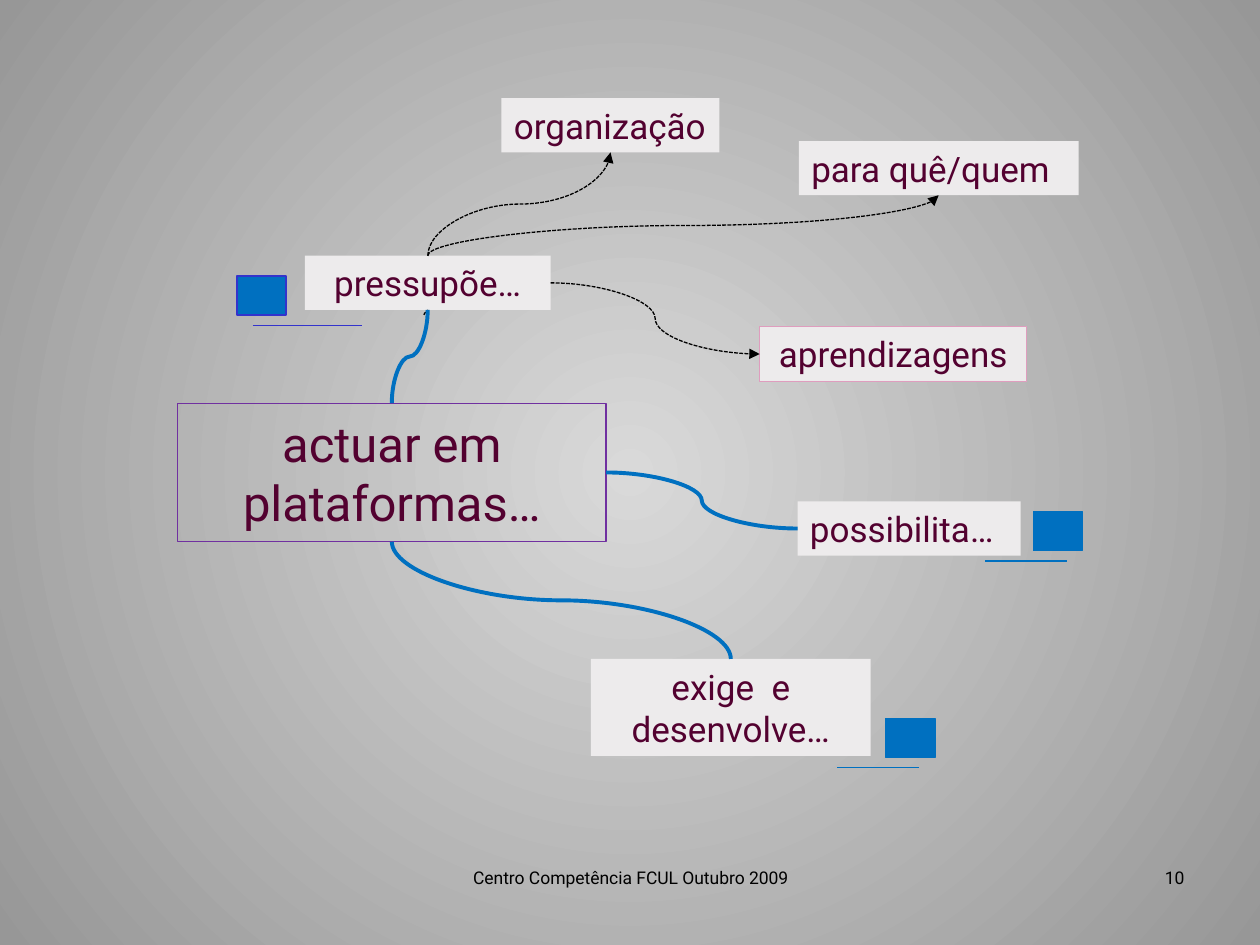
import pptx
import pptx.util
import pptx.dml.color
import pptx.enum.dml
import pptx.enum.shapes
import pptx.enum.text
import pptx.oxml
import pptx.oxml.ns
from lxml import etree

RGBColor = pptx.dml.color.RGBColor
SHAPE = pptx.enum.shapes.MSO_SHAPE
ALIGN = pptx.enum.text.PP_ALIGN
ANCHOR = pptx.enum.text.MSO_ANCHOR
FIT = pptx.enum.text.MSO_AUTO_SIZE
qn = pptx.oxml.ns.qn

PLUM = RGBColor(0x53, 0x01, 0x30)
PALE = RGBColor(0xED, 0xEB, 0xEC)
PINK = RGBColor(0xDF, 0x9D, 0xBE)
PURPLE = RGBColor(0x70, 0x30, 0xA0)
BLUE = RGBColor(0x00, 0x70, 0xC0)
INDIGO = RGBColor(0x33, 0x33, 0xCC)
BLACK = RGBColor(0x00, 0x00, 0x00)
LIGHT_GREY = RGBColor(0xD9, 0xD9, 0xD9)
DARK_GREY = RGBColor(0x97, 0x97, 0x97)


def write(tf, text, size=20, color=PLUM, align=ALIGN.CENTER, anchor=ANCHOR.TOP,
          fit=FIT.NONE, font="Roboto"):
    tf.word_wrap = True
    tf.auto_size = fit
    tf.vertical_anchor = anchor
    p = tf.paragraphs[0]
    p.alignment = align
    r = p.add_run()
    r.text = text
    r.font.name = font
    r.font.size = pptx.util.Pt(size)
    r.font.bold = False
    r.font.color.rgb = color


def side(sp, name):
    """Middle of one side of a shape."""
    across, down = {"top": (0.5, 0), "bottom": (0.5, 1),
                    "left": (0, 0.5), "right": (1, 0.5)}[name]
    return sp.left + sp.width * across, sp.top + sp.height * down


class ConceptMap:
    """Slide on a grid of 100 columns by 75 rows."""
    COLS, ROWS = 100, 75

    def __init__(self, prs):
        self.col = prs.slide_width / self.COLS
        self.row = prs.slide_height / self.ROWS
        self.s = prs.slides.add_slide(prs.slide_layouts[5])

    def place(self, col, row, cols, rows):
        return (round(col * self.col), round(row * self.row),
                round(cols * self.col), round(rows * self.row))

    def background(self, inner, outer):
        fill = self.s.background.fill
        fill.gradient()
        for stop, color in zip(fill.gradient_stops, (inner, outer)):
            stop.color.rgb = color
        grad = self.s.background._cSld.find(".//" + qn("a:gradFill"))
        lin = grad.find(qn("a:lin"))
        path = etree.Element(qn("a:path"), {"path": "circle"})
        etree.SubElement(path, qn("a:fillToRect"), dict.fromkeys("ltrb", "50000"))
        grad.replace(lin, path)

    def outline(self, sp, color, width=0.75):
        if color is None:
            sp.line.fill.background()
        else:
            sp.line.color.rgb = color
            sp.line.width = pptx.util.Pt(width)

    def title(self, text, *at):
        sp = self.s.shapes.title
        sp.left, sp.top, sp.width, sp.height = self.place(*at)
        self.outline(sp, PURPLE)
        write(sp.text_frame, text, size=28, anchor=ANCHOR.MIDDLE)
        return sp

    def label(self, text, *at, align=ALIGN.CENTER):
        sp = self.s.shapes.add_textbox(*self.place(*at))
        write(sp.text_frame, text, size=10, color=BLACK, align=align)

    def concept(self, text, *at, align=ALIGN.CENTER, line=None):
        sp = self.s.shapes.add_shape(SHAPE.RECTANGLE, *self.place(*at))
        sp.shadow.inherit = False
        sp.fill.solid()
        sp.fill.fore_color.rgb = PALE
        self.outline(sp, line)
        write(sp.text_frame, text, align=align, fit=FIT.SHAPE_TO_FIT_TEXT)
        return sp

    def callout(self, col, row, line=BLUE, start=0.68, end=-0.99):
        """Blue marker whose leader runs flat just below it."""
        sp = self.s.shapes.add_shape(SHAPE.LINE_CALLOUT_1,
                                     *self.place(col, row, 3.9, 3.1))
        sp.shadow.inherit = False
        sp.fill.solid()
        sp.fill.fore_color.rgb = BLUE
        self.outline(sp, line)
        for i, value in enumerate((1.27, start, 1.27, end)):
            sp.adjustments[i] = value

    def curve(self, begin, end, color=BLACK, width=0.75, upright=True, arrow=False):
        """Curved connector; an upright one leaves and arrives vertically."""
        (x1, y1), (x2, y2) = begin, end
        if upright:  # lay it out flat about its centre, then turn it by 90 degrees
            cx, cy, dx, dy = (x1 + x2) / 2, (y1 + y2) / 2, x2 - x1, y2 - y1
            x1, y1, x2, y2 = cx - dy / 2, cy + dx / 2, cx + dy / 2, cy - dx / 2
        sp = self.s.shapes.add_connector(pptx.enum.shapes.MSO_CONNECTOR.CURVE,
                                         *map(round, (x1, y1, x2, y2)))
        self.outline(sp, color, width)
        pr = sp._element.spPr
        if upright:
            pr.find(qn("a:xfrm")).set("rot", "5400000")
        if arrow:
            sp.line.dash_style = pptx.enum.dml.MSO_LINE.SQUARE_DOT
            etree.SubElement(pr.find(qn("a:ln")), qn("a:tailEnd"), {"type": "triangle"})
        etree.SubElement(pr, qn("a:effectLst"))


def main():
    prs = pptx.Presentation()
    prs.slide_width, prs.slide_height = pptx.util.Inches(10), pptx.util.Inches(7.5)
    m = ConceptMap(prs)
    m.background(LIGHT_GREY, DARK_GREY)

    # Footer and page number
    m.label("Centro Competência FCUL Outubro 2009", 34.2, 68.3, 31.7, 5.2)
    m.label("10", 71.7, 68.3, 23.3, 5.2, align=ALIGN.RIGHT)

    # Concepts
    purpose = m.concept("para quê/quem", 63.4, 11.2, 22.2, 4.3, align=ALIGN.LEFT)
    learning = m.concept("aprendizagens", 60.3, 25.9, 21.2, 4.4, line=PINK)
    organising = m.concept("organização", 39.8, 7.8, 17.3, 4.3, align=ALIGN.LEFT)
    centre = m.title("actuar em plataformas…", 14.1, 32, 34, 11)
    demands = m.concept("exige  e desenvolve…", 46.9, 52.3, 22.2, 7.7)
    enables = m.concept("possibilita…", 63.3, 39.8, 17.7, 4.3, align=ALIGN.LEFT)
    assumes = m.concept("pressupõe…", 24.2, 20.3, 19.5, 4.3)

    # Markers beside the main branches
    m.callout(70.3, 57)
    m.callout(82, 40.6)
    m.callout(18.8, 21.9, line=INDIGO, start=0.32, end=2.54)

    # Dashed arrows from the premise
    for target in (organising, purpose):
        m.curve(side(assumes, "top"), side(target, "bottom"), arrow=True)
    m.curve(side(assumes, "right"), side(learning, "left"), upright=False, arrow=True)
    x, y = side(assumes, "bottom")
    m.curve((x, y), (x - 0.3 * m.col, y + 0.4 * m.row))

    # Main branches from the centre
    branch = dict(color=BLUE, width=2.25)
    m.curve(side(centre, "top"), side(assumes, "bottom"), **branch)
    m.curve(side(centre, "right"), side(enables, "left"), upright=False, **branch)
    m.curve(side(centre, "bottom"), side(demands, "top"), **branch)

    prs.save("out.pptx")


if __name__ == "__main__":
    main()
